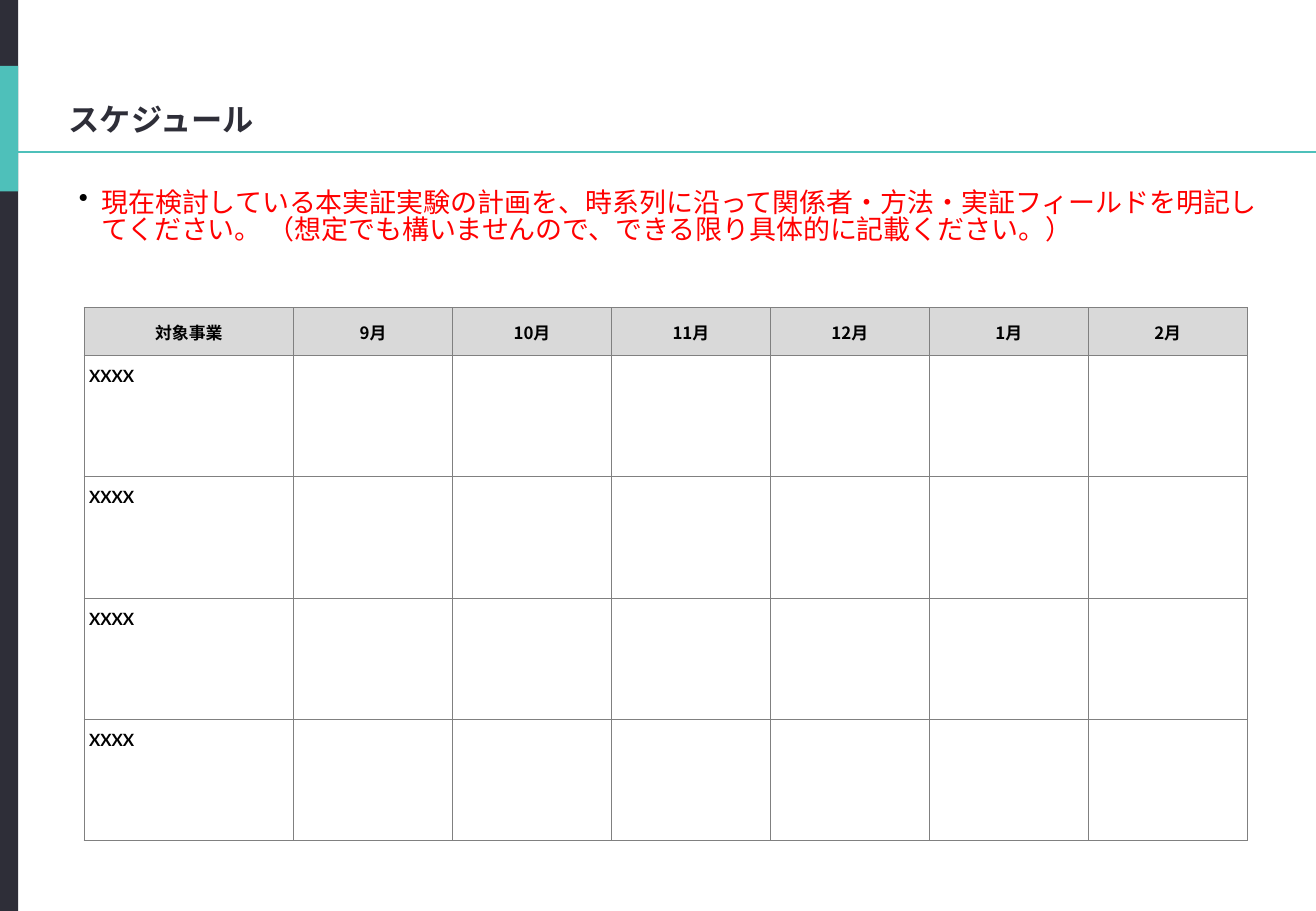
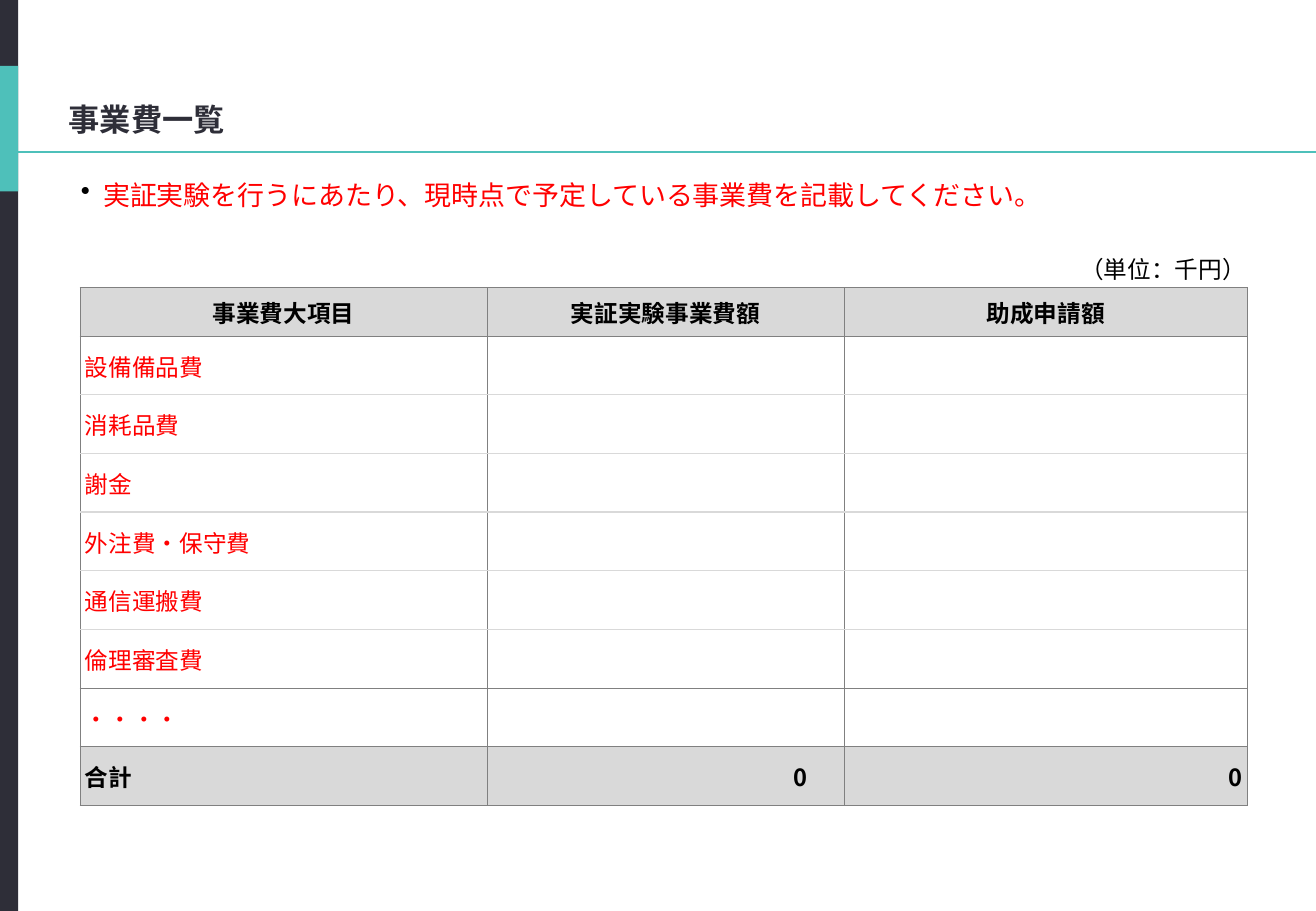
from lxml import etree
from pptx import Presentation
from pptx import util as u
from pptx.dml.color import RGBColor
from pptx.enum import shapes, text
from pptx.oxml.ns import qn

WIDTH, HEIGHT = 1300, 900
DARK, TEAL, RED, BLACK = "2E2E38", "4EC0BA", "FF0000", "000000"
GREY, LIGHT = "808080", "D9D9D9"
LATIN, JAPANESE = "Lato", "Noto Sans CJK JP"
ALIGN = text.PP_ALIGN
MIDDLE = text.MSO_ANCHOR.MIDDLE
SOLID, SOFT = (GREY, 0.5), (LIGHT, 1)
BOX = {"L": SOLID, "R": SOLID, "T": SOLID, "B": SOLID}


def px(length):
    """Turn px into EMU, at 120 px to the inch."""
    return u.Emu(length * 7620)


def color(value):
    return RGBColor.from_string(value)


def add_xml(parent, tag, **attributes):
    return etree.SubElement(parent, qn(tag), attributes)


# Text
def write(frame, content, size=16, font=JAPANESE, fill=BLACK, bold=False,
          align=ALIGN.LEFT, anchor=text.MSO_ANCHOR.TOP, spacing=None):
    frame.word_wrap = True
    frame.vertical_anchor = anchor
    paragraph = frame.paragraphs[0]
    paragraph.alignment = align
    if spacing:
        paragraph.line_spacing = spacing
    run = paragraph.add_run()
    run.text = content
    run.font.size = u.Pt(size)
    run.font.name = font
    run.font.bold = bold
    run.font.color.rgb = color(fill)
    add_xml(run.font._element, "a:ea", typeface=JAPANESE)
    return paragraph


def add_text(slide, box, content, **style):
    frame = slide.shapes.add_textbox(*map(px, box)).text_frame
    frame.margin_left = frame.margin_right = 0
    frame.margin_top = frame.margin_bottom = 0
    return write(frame, content, **style)


def add_bullet(slide, left, top, content):
    paragraph = add_text(slide, (left, top, 1164, 80), content, fill=RED,
                         align=ALIGN.JUSTIFY, spacing=0.85)
    paragraph.space_after = u.Pt(5.6)
    properties = paragraph._p.get_or_add_pPr()
    properties.set("marL", str(px(22)))
    properties.set("indent", str(px(-22)))
    bullet_color = add_xml(properties, "a:buClr")
    add_xml(bullet_color, "a:srgbClr", val=BLACK)
    add_xml(properties, "a:buChar", char="•")


# Shared frame of every slide
def add_band(slide, top, height, fill):
    band = slide.shapes.add_shape(shapes.MSO_SHAPE.RECTANGLE,
                                  0, px(top), px(18), px(height))
    band.shadow.inherit = False
    band.fill.solid()
    band.fill.fore_color.rgb = color(fill)
    band.line.fill.background()


def add_slide(presentation, title):
    slide = presentation.slides.add_slide(presentation.slide_layouts[6])
    add_band(slide, 0, HEIGHT, DARK)
    add_band(slide, 65, 124, TEAL)
    rule = slide.shapes.add_connector(shapes.MSO_CONNECTOR.STRAIGHT,
                                      0, px(150), px(WIDTH), px(150))
    rule.line.color.rgb = color(TEAL)
    rule.line.width = u.Pt(1.5)
    add_xml(rule._element.spPr, "a:effectLst")
    add_text(slide, (68, 96, 1164, 44), title, size=18.5, font=LATIN,
             fill=DARK, bold=True, align=ALIGN.JUSTIFY, anchor=MIDDLE)
    return slide


# Tables
def add_table(slide, left, top, columns, rows):
    table = slide.shapes.add_table(len(rows), len(columns), px(left), px(top),
                                   px(sum(columns)), px(sum(rows))).table
    table.first_row = table.horz_banding = False
    for column, width in zip(table.columns, columns):
        column.width = px(width)
    for row, height in zip(table.rows, rows):
        row.height = px(height)
    return table


def set_cell(cell, borders, content="", fill=None, left=1, right=1, **style):
    cell.margin_left, cell.margin_right = px(left), px(right)
    cell.margin_top, cell.margin_bottom = px(1), 0
    cell.vertical_anchor = MIDDLE
    properties = cell._tc.get_or_add_tcPr()
    for side in "LRTB":
        line_color, width = borders.get(side, (None, 0))
        line = add_xml(properties, f"a:ln{side}", w=str(u.Pt(width)))
        if line_color:
            solid = add_xml(line, "a:solidFill")
            add_xml(solid, "a:srgbClr", val=line_color)
        else:
            add_xml(line, "a:noFill")
    if fill:
        cell.fill.solid()
        cell.fill.fore_color.rgb = color(fill)
    else:
        cell.fill.background()
    if content:
        write(cell.text_frame, content, anchor=MIDDLE, **style)
    else:
        # Small empty text keeps the row at its set height
        add_xml(cell.text_frame.paragraphs[0]._p, "a:endParaRPr", sz="1000")


def set_header(table, row, labels, size):
    for column, label in enumerate(labels):
        set_cell(table.cell(row, column), BOX, label, fill=LIGHT, size=size,
                 bold=True, align=ALIGN.CENTER)


# Slides
def add_schedule(presentation):
    slide = add_slide(presentation, "スケジュール")
    add_bullet(slide, 78, 188,
               "現在検討している本実証実験の計画を、時系列に沿って関係者・方法・"
               "実証フィールドを明記してください。 "
               "（想定でも構いませんので、できる限り具体的に記載ください。）")
    projects, lines = ["XXXX"] * 4, 3
    months = [f"{month}月" for month in (9, 10, 11, 12, 1, 2)]
    table = add_table(slide, 83, 304, [207] + [157] * len(months),
                      [47] + [40] * lines * len(projects))
    set_header(table, 0, ["対象事業"] + months, size=10)
    for index, project in enumerate(projects):
        for line in range(lines):
            borders = {"L": SOLID, "R": SOLID}
            if line == 0:
                borders["T"] = SOLID
            if line == lines - 1:
                borders["B"] = SOLID
            for column in range(len(months) + 1):
                label = project if line == column == 0 else ""
                set_cell(table.cell(1 + index * lines + line, column), borders,
                         label, left=5, size=10, font=LATIN, bold=True)


def add_costs(presentation):
    slide = add_slide(presentation, "事業費一覧")
    add_bullet(slide, 80, 181,
               "実証実験を行うにあたり、現時点で予定している事業費を記載してください。")
    items = ["設備備品費", "消耗品費", "謝金", "外注費・保守費", "通信運搬費",
             "倫理審査費", "・・・・"]
    table = add_table(slide, 79, 244, [402, 353, 398],
                      [40, 48] + [58] * (len(items) + 1))
    for column, label in enumerate(["", "", "（単位：千円）"]):
        set_cell(table.cell(0, column), {"B": SOLID}, label, size=14,
                 align=ALIGN.RIGHT)
    set_header(table, 1, ["事業費大項目", "実証実験事業費額", "助成申請額"], size=14)

    # Soft lines part the items, down to the open last one
    last = len(items) - 1
    for index, item in enumerate(items):
        borders = {"L": SOLID, "R": SOLID,
                   "T": SOLID if index in (0, last) else SOFT,
                   "B": SOLID if index >= last - 1 else SOFT}
        for column, label in enumerate([item, "", ""]):
            set_cell(table.cell(2 + index, column), borders, label, left=5,
                     size=14, font=LATIN, fill=None) if not label else \
                set_item(table.cell(2 + index, column), borders, label)

    totals = [("合計", ALIGN.LEFT, 1), ("0", ALIGN.RIGHT, 36), ("0", ALIGN.RIGHT, 5)]
    for column, (label, align, right) in enumerate(totals):
        set_cell(table.cell(len(items) + 2, column), BOX, label, fill=LIGHT,
                 left=5, right=right, size=14, bold=True, align=align)


def set_item(cell, borders, label):
    set_cell(cell, borders, label, left=5, size=14, font=LATIN)
    cell.text_frame.paragraphs[0].runs[0].font.color.rgb = color(RED)


def main():
    presentation = Presentation()
    presentation.slide_width, presentation.slide_height = px(WIDTH), px(HEIGHT)
    add_schedule(presentation)
    add_costs(presentation)
    presentation.save("out.pptx")


if __name__ == "__main__":
    main()
